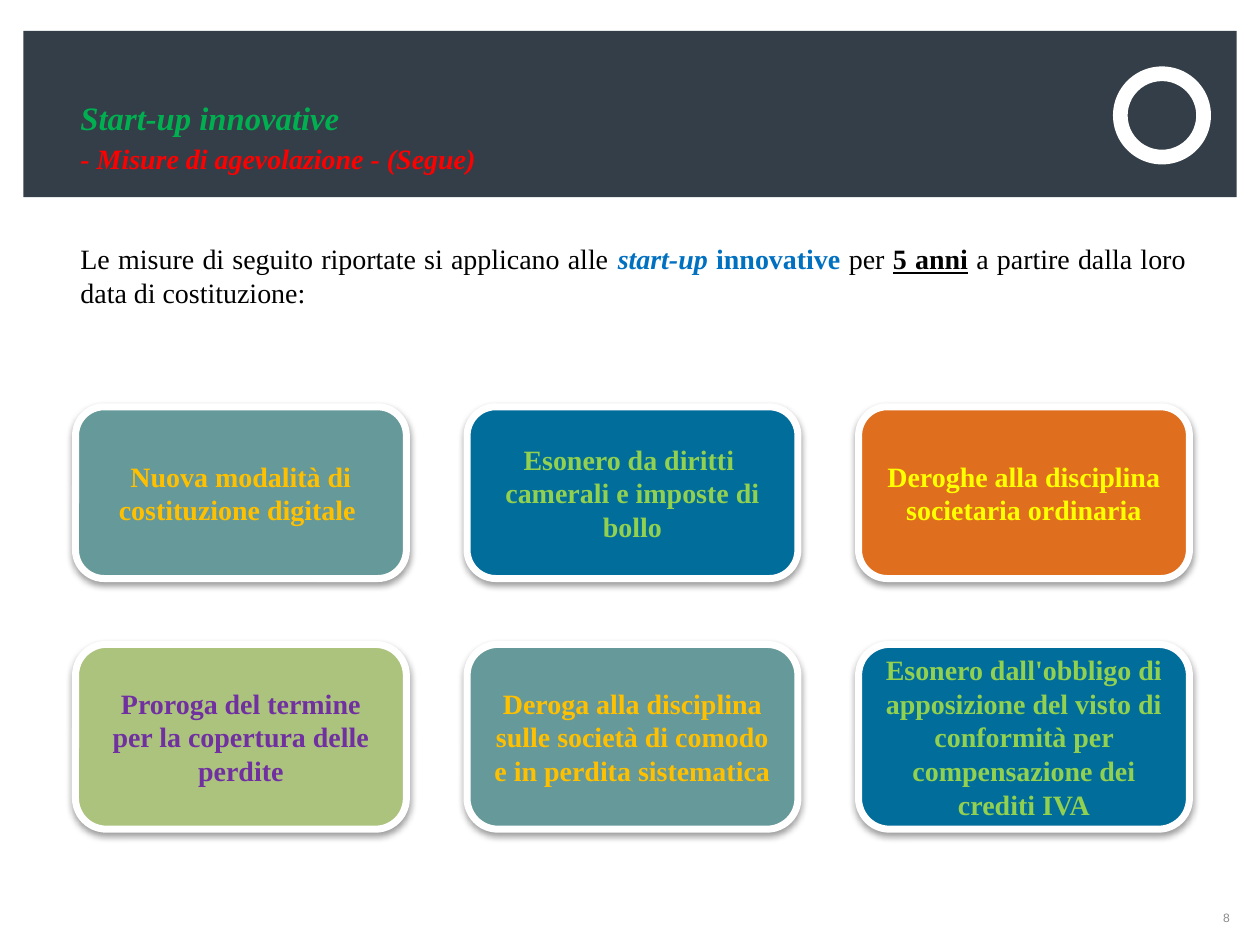
import pptx
import pptx.util
import pptx.dml.color
import pptx.enum.shapes
import pptx.enum.text
import pptx.oxml

Pt = pptx.util.Pt
MSO_SHAPE = pptx.enum.shapes.MSO_SHAPE
PP_ALIGN = pptx.enum.text.PP_ALIGN
MIDDLE = pptx.enum.text.MSO_ANCHOR.MIDDLE
SERIF = "Times New Roman"
SHADOW = """<a:effectLst xmlns:a="http://schemas.openxmlformats.org/drawingml/2006/main">
<a:outerShdw blurRad="39370" dist="20320" dir="5400000" rotWithShape="0">
<a:srgbClr val="000000"><a:alpha val="38000"/></a:srgbClr></a:outerShdw></a:effectLst>"""


def rgb(value):
    return pptx.dml.color.RGBColor.from_string(value)


def set_font(font, size, color, bold=False, italic=False, name=SERIF):
    font.name, font.size, font.bold, font.italic = name, Pt(size), bold, italic
    font.color.rgb = rgb(color)


prs = pptx.Presentation()
prs.slide_width, prs.slide_height = Pt(540), Pt(405)
s = prs.slides.add_slide(prs.slide_layouts[6])

for kind, x, y, w, h, color in [
    (MSO_SHAPE.RECTANGLE, 10, 13.2, 520, 71.3, "333E48"),
    (MSO_SHAPE.DONUT, 477, 28.5, 42, 42, "FFFFFF"),
]:
    sp = s.shapes.add_shape(kind, Pt(x), Pt(y), Pt(w), Pt(h))
    sp.shadow.inherit = False
    sp.fill.solid()
    sp.fill.fore_color.rgb = rgb(color)
    sp.line.fill.background()
sp.adjustments[0] = 0.15

tf = s.shapes.add_textbox(Pt(27.4), Pt(100), Pt(488), Pt(90)).text_frame
tf.word_wrap = True
p = tf.paragraphs[0]
p.alignment = PP_ALIGN.JUSTIFY
for text, color, bold, italic, underline in [
    ("Le misure di seguito riportate si applicano alle ", "000000", False, False, False),
    ("start-up", "0070C0", True, True, False),
    (" innovative", "0070C0", True, False, False),
    (" per ", "000000", False, False, False),
    ("5 anni", "000000", True, False, True),
    (" a partire dalla loro data di costituzione:", "000000", False, False, False),
]:
    r = p.add_run()
    r.text = text
    set_font(r.font, 12, color, bold, italic)
    r.font.underline = underline

tf = s.shapes.add_textbox(Pt(27.4), Pt(39), Pt(440), Pt(39)).text_frame
tf.word_wrap = True
tf.vertical_anchor = MIDDLE
p = tf.paragraphs[0]
p.text = "Start-up innovative"
p.space_after = Pt(2)
set_font(p.font, 14, "00B050", True, True)
p = tf.add_paragraph()
p.text = "- Misure di agevolazione - (Segue)"
set_font(p.font, 12, "FF0000", True, True)

tf = s.shapes.add_textbox(Pt(512.6), Pt(386.6), Pt(26), Pt(18)).text_frame
p = tf.paragraphs[0]
p.text = "8"
p.alignment = PP_ALIGN.CENTER
set_font(p.font, 5.2, "8C8C8C", name="Arial")

TEAL, BLUE = ("669999", "FFC000"), ("016D9B", "92D050")
ORANGE, GREEN = ("DF6E1E", "FFFF00"), ("ACC37E", "7030A0")
rows = [
    (174.4, 73.6, [
        ("Nuova modalità di costituzione digitale ", TEAL),
        ("Esonero da diritti  camerali e imposte di bollo", BLUE),
        ("Deroghe alla disciplina societaria ordinaria", ORANGE),
    ]),
    (276.2, 79.2, [
        ("Proroga del termine per la copertura delle perdite", GREEN),
        ("Deroga alla disciplina sulle società di comodo e in perdita sistematica ", TEAL),
        ("Esonero dall'obbligo di apposizione del visto di conformità per "
         "compensazione dei crediti IVA", BLUE),
    ]),
]
for top, height, cards in rows:
    for col, (text, (fill, color)) in enumerate(cards):
        sp = s.shapes.add_shape(MSO_SHAPE.ROUNDED_RECTANGLE, Pt(32.4 + 167.8 * col),
                                Pt(top), Pt(141.8), Pt(height))
        sp.fill.solid()
        sp.fill.fore_color.rgb = rgb(fill)
        sp.line.color.rgb = rgb("FFFFFF")
        sp.line.width = Pt(3)
        sp._element.spPr.append(pptx.oxml.parse_xml(SHADOW))
        tf = sp.text_frame
        tf.word_wrap = True
        tf.vertical_anchor = MIDDLE
        p = tf.paragraphs[0]
        p.text = text
        p.alignment = PP_ALIGN.CENTER
        set_font(p.font, 12, color, True)

prs.save("out.pptx")
